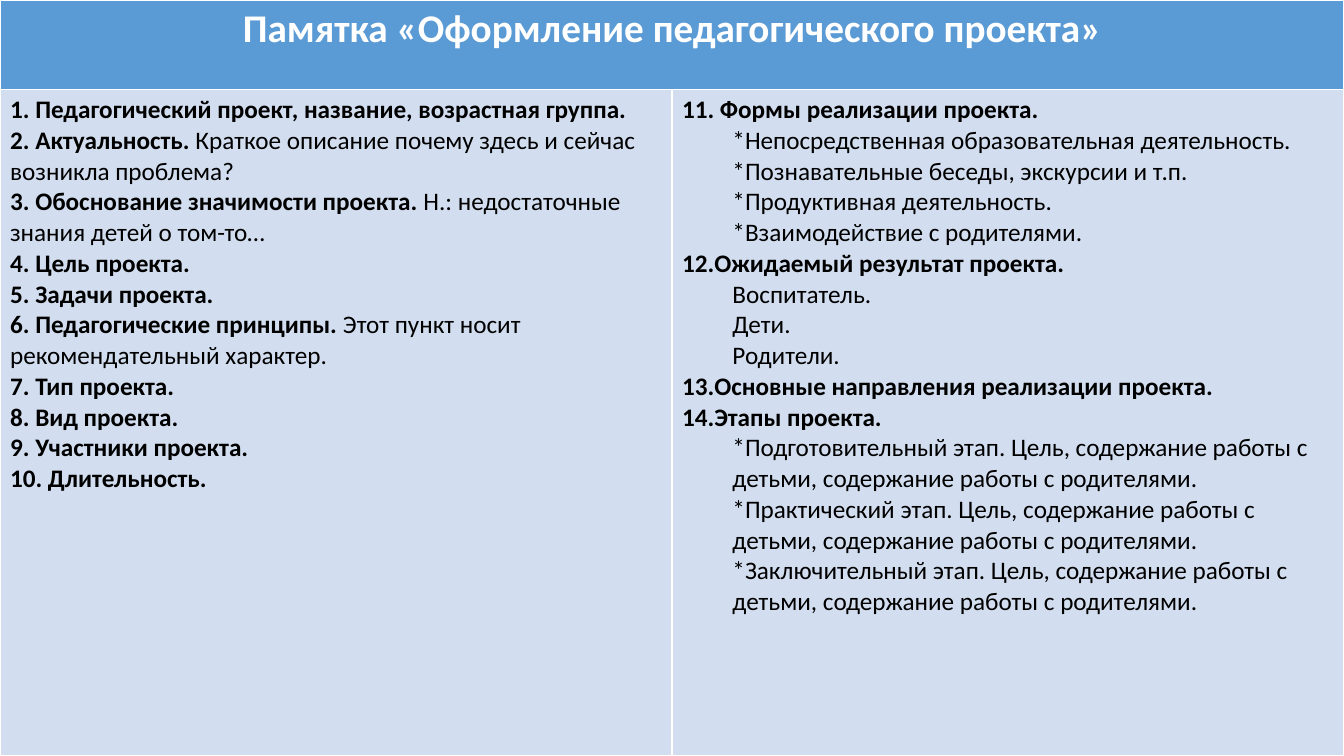
from pptx import Presentation
from pptx.dml.color import RGBColor
from pptx.enum.text import PP_ALIGN as Align
from pptx.util import Pt

TITLE = "Памятка «Оформление педагогического проекта»"
# Each item: bold heading, plain text after it, indented lines below it
LEFT = [
    ("1. Педагогический проект, название, возрастная группа.", "", []),
    ("2. Актуальность.", "Краткое описание почему здесь и сейчас возникла проблема?", []),
    ("3. Обоснование значимости проекта.", "Н.: недостаточные знания детей о том-то…", []),
    ("4. Цель проекта.", "", []),
    ("5. Задачи проекта.", "", []),
    ("6. Педагогические принципы.", "Этот пункт носит рекомендательный характер.", []),
    ("7. Тип проекта.", "", []),
    ("8. Вид проекта.", "", []),
    ("9. Участники проекта.", "", []),
    ("10. Длительность.", "", []),
]
STAGE = "Цель, содержание работы с детьми, содержание работы с родителями."
RIGHT = [
    ("11. Формы реализации проекта.", "", [
        "*Непосредственная образовательная деятельность.",
        "*Познавательные беседы, экскурсии и т.п.",
        "*Продуктивная деятельность.",
        "*Взаимодействие с родителями.",
    ]),
    ("12.Ожидаемый результат проекта.", "", ["Воспитатель.", "Дети.", "Родители."]),
    ("13.Основные направления реализации проекта.", "", []),
    ("14.Этапы проекта.", "", [
        f"*{name} этап. {STAGE}"
        for name in ("Подготовительный", "Практический", "Заключительный")
    ]),
]

FONT = "Calibri"
WHITE = RGBColor(0xFF, 0xFF, 0xFF)
BLACK = RGBColor(0, 0, 0)
BLUE = RGBColor(0x5B, 0x9B, 0xD5)
PALE = RGBColor(0xD2, 0xDE, 0xEF)
WIDTH, HEIGHT, HEAD = 960, 540, 64
INDENT = 36


def paint(cell, color):
    cell.fill.solid()
    cell.fill.fore_color.rgb = color


def style(para, size, color, bold):
    font = para.font
    font.name, font.size, font.bold = FONT, Pt(size), bold
    font.color.rgb = color


def add_line(frame, head, tail="", level=0):
    """Write one paragraph: a bold head, a plain tail, or both."""
    para = frame.paragraphs[0]
    if para.runs:
        para = frame.add_paragraph()
    para.level = level
    props = para._p.get_or_add_pPr()
    props.set("marL", str(Pt(INDENT * level)))
    props.set("indent", "0")
    style(para, 18, BLACK, bool(head))
    if head:
        para.add_run().text = head + (" " if tail else "")
    if tail:
        run = para.add_run()
        run.text = tail
        run.font.bold = False


def fill_cell(cell, items):
    paint(cell, PALE)
    for head, tail, lines in items:
        add_line(cell.text_frame, head, tail)
        for line in lines:
            add_line(cell.text_frame, "", line, level=1)


def main():
    deck = Presentation()
    deck.slide_width, deck.slide_height = Pt(WIDTH), Pt(HEIGHT)
    slide = deck.slides.add_slide(deck.slide_layouts[6])
    table = slide.shapes.add_table(2, 2, 0, 0, Pt(WIDTH), Pt(HEIGHT)).table
    table.horz_banding = False
    table.rows[0].height, table.rows[1].height = Pt(HEAD), Pt(HEIGHT - HEAD)

    title = table.cell(0, 0)
    title.merge(table.cell(0, 1))
    paint(title, BLUE)
    para = title.text_frame.paragraphs[0]
    para.alignment = Align.CENTER
    style(para, 28, WHITE, True)
    para.add_run().text = TITLE

    for col, items in enumerate((LEFT, RIGHT)):
        fill_cell(table.cell(1, col), items)
    deck.save("out.pptx")


if __name__ == "__main__":
    main()
